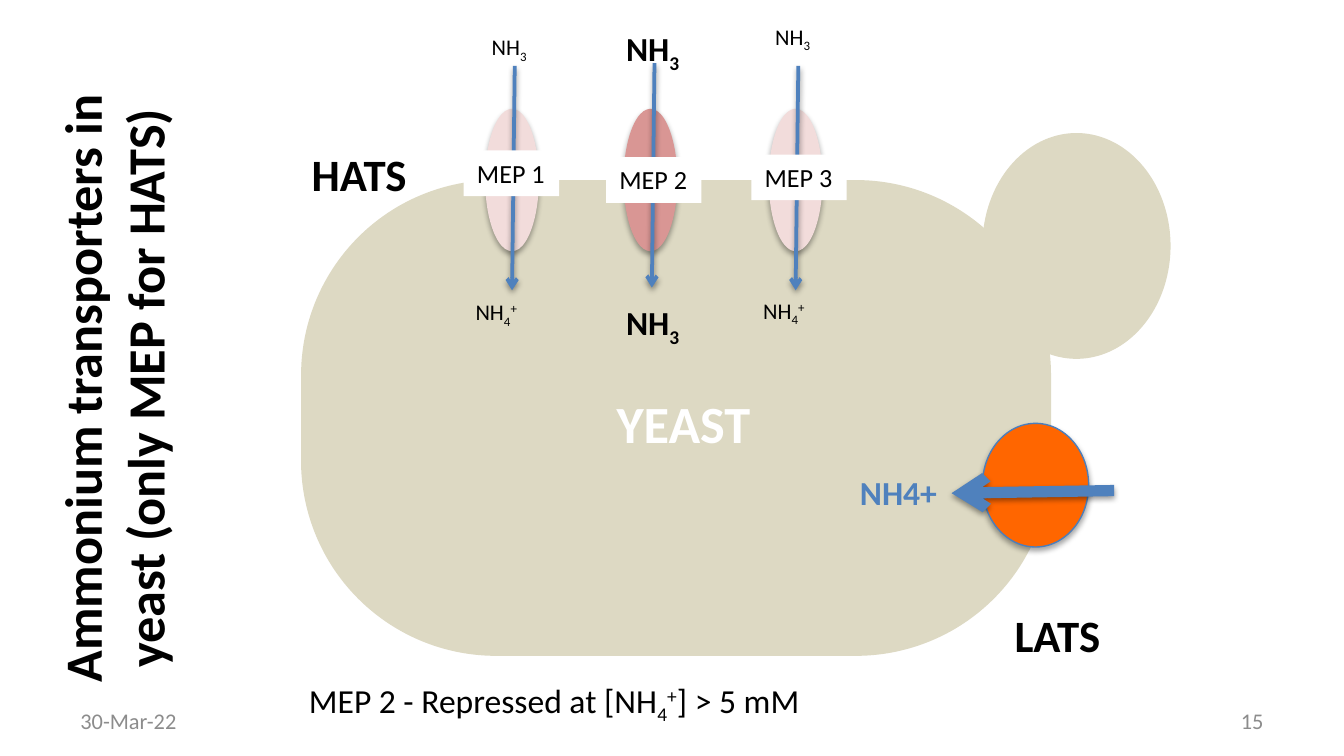
from lxml import etree
from pptx import Presentation
from pptx.dml.color import RGBColor
from pptx.enum import shapes, text
from pptx.oxml import ns, parse_xml
from pptx.util import Inches, Pt

# Content: formulas are runs of (text, baseline)
TITLE = "Ammonium transporters in yeast (only MEP for HATS)"
SUB, SUP = -25000, 30000
NH3 = [("NH", 0), ("3", SUB)]
NH4 = [("NH", 0), ("4", SUB), ("+", SUP)]
NOTE = [("MEP 2 - Repressed at [NH", 0), *NH4[1:], ("] > 5 mM", 0)]

BLACK, WHITE, GREY = "000000", "FFFFFF", "8C8C8C"
CELL, BLUE, ORANGE, PINK, ROSE = "DDD9C3", "4F81BD", "FF6600", "F2DCDB", "D99694"

SMALL, LARGE = dict(size=12), dict(size=18, bold=True)
# Each transporter: name, oval left, fill, arrow start, name box, outside and inside formulas
TRANSPORTERS = [
    ("MEP 1", 3.61, PINK, (3.83, 0.49), (3.45, 1.12),
     (NH3, (3.56, 0.2, 0.47, 0.3), SMALL), (NH4, (3.44, 2.17, 0.53, 0.3), SMALL)),
    ("MEP 2", 4.64, ROSE, (4.87, 0.47), (4.51, 1.17),
     (NH3, (4.56, 0.16, 0.61, 0.4), LARGE), (NH3, (4.56, 2.2, 0.61, 0.4), LARGE)),
    ("MEP 3", 5.72, PINK, (5.94, 0.49), (5.59, 1.15),
     (NH3, (5.67, 0.12, 0.47, 0.3), SMALL), (NH4, (5.58, 2.16, 0.53, 0.3), SMALL)),
]
LABELS = [
    ("NH4+", (6.3, 3.46, 0.78, 0.4), dict(size=18, bold=True, color=BLUE)),
    ("YEAST", (4.49, 2.86, 1.23, 0.57), dict(size=28, bold=True, color=WHITE)),
    (NOTE, (2.2, 5.01, 3.92, 0.4), dict(size=18)),
    ("HATS", (2.22, 1.04, 0.92, 0.5), dict(size=24, bold=True)),
    ("LATS", (7.45, 4.47, 0.85, 0.5), dict(size=24, bold=True)),
]

# Widescreen 16:9 slide
prs = Presentation()
prs.slide_width = Inches(10)
prs.slide_height = prs.slide_width * 9 // 16
s = prs.slides.add_slide(prs.slide_layouts[5])


def paint(fmt, color):
    fmt.solid()
    fmt.fore_color.rgb = RGBColor.from_string(color)


def write(sp, runs, size=12, bold=False, color=BLACK, wrap=False,
          align=text.PP_ALIGN.LEFT, anchor=text.MSO_ANCHOR.TOP):
    tf = sp.text_frame
    tf.word_wrap, tf.vertical_anchor = wrap, anchor
    tf.auto_size = text.MSO_AUTO_SIZE.NONE
    p = tf.paragraphs[0]
    p.alignment = align
    for words, base in [(runs, 0)] if isinstance(runs, str) else runs:
        r = p.add_run()
        r.text = words
        r.font.name, r.font.size, r.font.bold = "Calibri", Pt(size), bold
        paint(r.font.fill, color)
        if base:
            r._r.get_or_add_rPr().set("baseline", str(base))


def label(runs, box, fill=None, **fmt):
    sp = s.shapes.add_textbox(*map(Inches, box))
    if fill:
        paint(sp.fill, fill)
    write(sp, runs, **fmt)


def add_shadow(sp, opacity, distance):
    sp._element.spPr.append(parse_xml(
        f'<a:effectLst {ns.nsdecls("a")}><a:outerShdw blurRad="{Pt(3.1)}" '
        f'dist="{Pt(distance)}" dir="5400000" rotWithShape="0"><a:srgbClr val="{BLACK}">'
        f'<a:alpha val="{opacity * 1000}"/></a:srgbClr></a:outerShdw></a:effectLst>'))


def shape(kind, box, fill, line=None, shadow=False):
    sp = s.shapes.add_shape(kind, *map(Inches, box))
    paint(sp.fill, fill)
    if line:
        paint(sp.line.fill, line)
        sp.line.width = Pt(0.75)
    else:
        sp.line.fill.background()
    if shadow:
        add_shadow(sp, 35, 1.8)
    else:
        sp.shadow.inherit = False
    return sp


def arrow(x1, y1, x2, y2, width):
    c = s.shapes.add_connector(shapes.MSO_CONNECTOR.STRAIGHT,
                               *map(Inches, (x1, y1, x2, y2)))
    paint(c.line.fill, BLUE)
    c.line.width = Pt(width)
    etree.SubElement(c.line._get_or_add_ln(), ns.qn("a:tailEnd"), type="arrow")
    add_shadow(c, 38, 1.6)


# Title, date and slide number
title = s.shapes.title
title.left, title.top, title.width, title.height = map(Inches, (-1.7, 2.42, 5.07, 0.94))
title.rotation = 270
middle = text.MSO_ANCHOR.MIDDLE
write(title, TITLE, size=28, bold=True, wrap=True,
      align=text.PP_ALIGN.CENTER, anchor=middle)
label("30-Mar-22", (0.5, 5.21, 2.33, 0.3), color=GREY, wrap=True, anchor=middle)
label("15", (7.17, 5.21, 2.33, 0.3), color=GREY, wrap=True,
      align=text.PP_ALIGN.RIGHT, anchor=middle)

# Yeast cell and its bud
OVAL = shapes.MSO_SHAPE.OVAL
cell = shape(shapes.MSO_SHAPE.ROUNDED_RECTANGLE, (2.24, 1.34, 5.58, 3.54), CELL)
cell.adjustments[0] = 0.41
shape(OVAL, (7.31, 0.99, 1.4, 1.68), CELL)

# High affinity transporters in the upper membrane
for name, left, fill, (x, y), corner, outside, inside in TRANSPORTERS:
    shape(OVAL, (left, 0.81, 0.4, 1.06), fill, shadow=True)
    arrow(x, y, x - 0.02, y + 1.67, 2)
    label(name, (*corner, 0.71, 0.34), fill=WHITE, size=14)
    for runs, box, fmt in (outside, inside):
        label(runs, box, **fmt)

# Low affinity transporter on the right
shape(OVAL, (7.31, 3.15, 0.79, 0.92), ORANGE, line="4B7EBC", shadow=True)
arrow(8.29, 3.65, 7.08, 3.67, 6)

for runs, box, fmt in LABELS:
    label(runs, box, **fmt)

prs.save("out.pptx")
